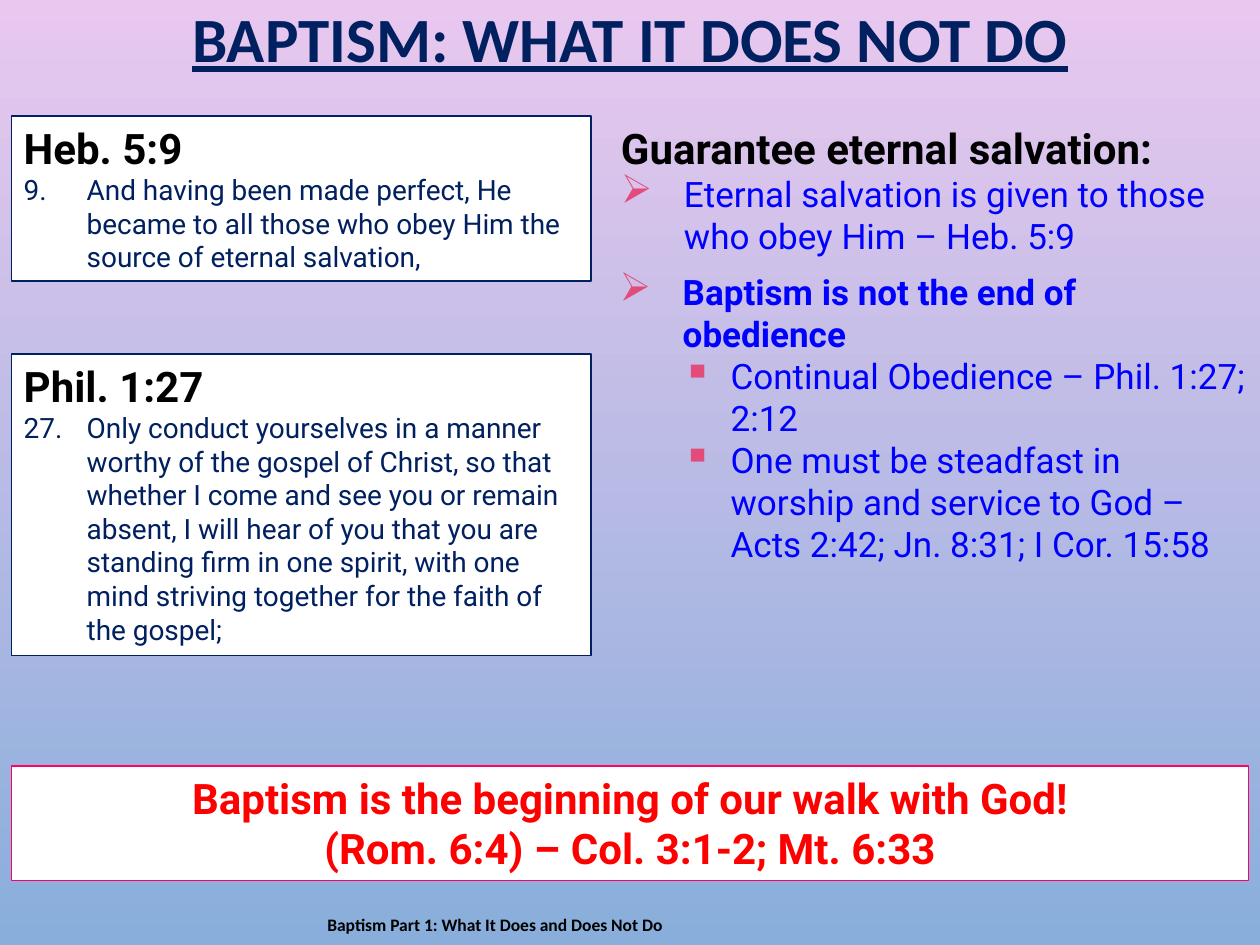
from lxml.etree import SubElement
from pptx import Presentation
from pptx.dml.color import RGBColor
from pptx.enum.shapes import MSO_SHAPE
from pptx.enum.text import MSO_ANCHOR, MSO_AUTO_SIZE, PP_ALIGN
from pptx.oxml.ns import qn
from pptx.util import Inches, Pt

NAVY, BLACK, BLUE, RED = "002060", "000000", "0000FF", "FF0000"
WHITE, PINK, BULLET = "FFFFFF", "FF0066", "E34B7A"
BACKGROUND = ("E9C8EF", "89AEDB")

TITLE = "BAPTISM: WHAT IT DOES NOT DO"
FOOTER = "Baptism Part 1: What It Does and Does Not Do"

HEADING = dict(size=24, color=BLACK, bold=True, left=0.5, hang=0.5)
POINT = dict(size=20, color=BLUE, left=0.5, hang=0.5, bullet="➢")
SUBPOINT = dict(POINT, left=0.88, hang=0.38, bullet="▪", level=1)
VERSE = dict(size=16, color=NAVY, left=0.5, hang=0.5)
CLOSING = dict(size=24, color=RED, bold=True, align=PP_ALIGN.CENTER)

POINT_BOXES = [
    ((4.83, 0.92, 5.18, 1.18), [
        ("Guarantee eternal salvation:", HEADING),
        ("Eternal salvation is given to those who obey Him – Heb. 5:9", POINT),
    ]),
    ((4.82, 2.1, 5.18, 2.46), [
        ("Baptism is not the end of obedience", dict(POINT, bold=True)),
        ("Continual Obedience – Phil. 1:27; 2:12", SUBPOINT),
        ("One must be steadfast in worship and service to God – "
         "Acts 2:42; Jn. 8:31; I Cor. 15:58", SUBPOINT),
    ]),
]
PANELS = [
    ((0.09, 0.92, 4.6, 1.31), NAVY, [
        ("Heb. 5:9", HEADING),
        ("9.\tAnd having been made perfect, He became to all those who obey "
         "Him the source of eternal salvation,", dict(VERSE, tab=0.35)),
    ]),
    ((0.09, 2.81, 4.6, 2.39), NAVY, [
        ("Phil. 1:27", HEADING),
        ("27.\tOnly conduct yourselves in a manner worthy of the gospel of "
         "Christ, so that whether I come and see you or remain absent, I will "
         "hear of you that you are standing firm in one spirit, with one mind "
         "striving together for the faith of the gospel;", dict(VERSE, tab=0.42)),
    ]),
    ((0.09, 6.08, 9.82, 0.91), PINK, [
        ("Baptism is the beginning of our walk with God!", CLOSING),
        ("(Rom. 6:4) – Col. 3:1-2; Mt. 6:33", CLOSING),
    ]),
]


def paint(color_format, value):
    color_format.rgb = RGBColor.from_string(value)


def write(paragraph, text, size, color, bold=False, font="Roboto", left=0,
          hang=0, bullet=None, level=0, tab=None, align=PP_ALIGN.LEFT):
    paragraph.alignment = align
    paragraph.level = level
    properties = paragraph._p.get_or_add_pPr()
    properties.set("marL", str(Inches(left)))
    properties.set("indent", str(-Inches(hang)))
    if bullet:
        bullet_color = SubElement(properties, qn("a:buClr"))
        SubElement(bullet_color, qn("a:srgbClr"), val=BULLET)
        SubElement(properties, qn("a:buSzPct"), val="115000")
        SubElement(properties, qn("a:buChar"), char=bullet)
    if tab:
        stops = SubElement(properties, qn("a:tabLst"))
        SubElement(stops, qn("a:tab"), pos=str(Inches(tab)), algn="l")
    run = paragraph.add_run()
    run.text = text
    run.font.name, run.font.size, run.font.bold = font, Pt(size), bold
    paint(run.font.color, color)
    return run


def fill_frame(frame, lines):
    frame.word_wrap = True
    frame.auto_size = MSO_AUTO_SIZE.SHAPE_TO_FIT_TEXT
    frame.vertical_anchor = MSO_ANCHOR.TOP
    for index, (text, style) in enumerate(lines):
        paragraph = frame.add_paragraph() if index else frame.paragraphs[0]
        write(paragraph, text, **style)


def add_title(slide):
    title = slide.shapes.title
    title.left, title.top, title.width, title.height = map(Inches, (0, 0, 10, 0.67))
    title.text_frame.vertical_anchor = MSO_ANCHOR.MIDDLE
    heading = title.text_frame.paragraphs[0]
    heading.line_spacing = 0.9
    run = write(heading, TITLE, 36, NAVY, True, "Calibri", align=PP_ALIGN.CENTER)
    run.font.underline = True


def add_footer(slide):
    footer = slide.shapes.add_textbox(*map(Inches, (2.5, 7.17, 4.33, 0.33))).text_frame
    footer.word_wrap = True
    footer.vertical_anchor = MSO_ANCHOR.MIDDLE
    write(footer.paragraphs[0], FOOTER, 10, BLACK, True, "Calibri")


def add_panel(slide, place, outline, lines):
    panel = slide.shapes.add_shape(MSO_SHAPE.RECTANGLE, *map(Inches, place))
    panel.shadow.inherit = False
    panel.fill.solid()
    paint(panel.fill.fore_color, WHITE)
    paint(panel.line.color, outline)
    panel.line.width = Pt(0.75)
    fill_frame(panel.text_frame, lines)


def main():
    """Build the baptism slide and save it."""
    deck = Presentation()
    deck.slide_width, deck.slide_height = Inches(10), Inches(7.5)
    slide = deck.slides.add_slide(deck.slide_layouts[5])
    backdrop = slide.background.fill
    backdrop.gradient()
    backdrop.gradient_angle = 270
    for stop, value in zip(backdrop.gradient_stops, BACKGROUND):
        paint(stop.color, value)
    add_title(slide)
    add_footer(slide)
    for place, lines in POINT_BOXES:
        fill_frame(slide.shapes.add_textbox(*map(Inches, place)).text_frame, lines)
    for place, outline, lines in PANELS:
        add_panel(slide, place, outline, lines)
    deck.save("out.pptx")


if __name__ == "__main__":
    main()
